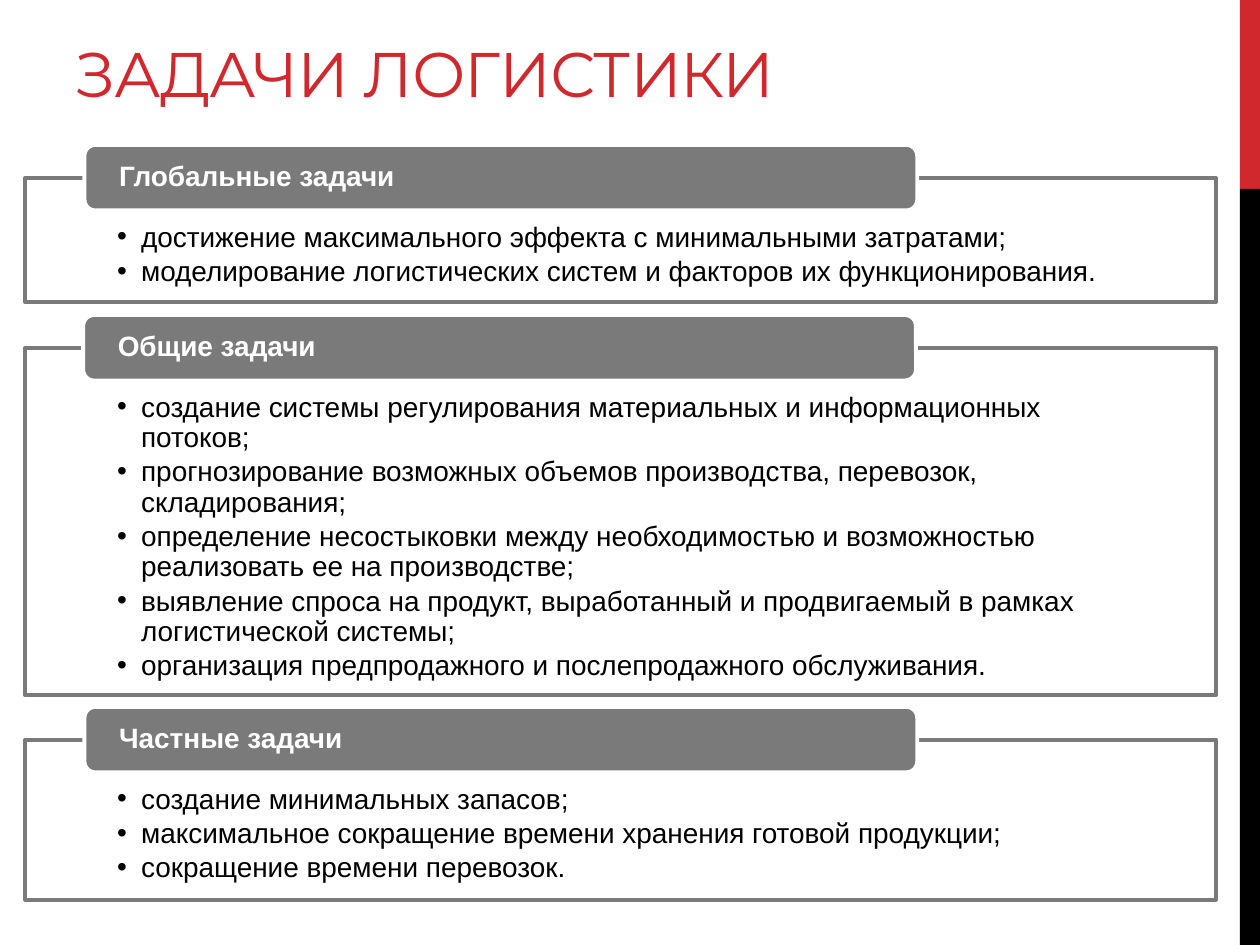
from dataclasses import dataclass

from lxml.etree import SubElement
from pptx import Presentation
from pptx.dml.color import RGBColor
from pptx.enum.shapes import MSO_SHAPE as Shape
from pptx.enum.text import MSO_ANCHOR as Anchor, PP_ALIGN as Align
from pptx.oxml.ns import qn
from pptx.util import Inches, Pt


@dataclass(frozen=True)
class Theme:
    red: str = "D1282E"
    black: str = "000000"
    white: str = "FFFFFF"
    gray: str = "7A7A7A"
    title_font: str = "Montserrat"
    body_font: str = "Arial"
    title_size: float = 36
    body_size: float = 16
    line_width: float = 2.25


@dataclass(frozen=True)
class TaskGroup:
    heading: str
    tasks: tuple[str, ...]
    top: float
    height: float
    tab_left: float = 0.67


THEME = Theme()
TAB_RISE = 0.26
GROUPS = (
    TaskGroup("Глобальные задачи", (
        "достижение максимального эффекта с минимальными затратами;",
        "моделирование логистических систем и факторов их функционирования.",
    ), 1.41, 0.99),
    TaskGroup("Общие задачи", (
        "создание системы регулирования материальных и информационных потоков;",
        "прогнозирование возможных объемов производства, перевозок, складирования;",
        "определение несостыковки между необходимостью и возможностью "
        "реализовать ее на производстве;",
        "выявление спроса на продукт, выработанный и продвигаемый в рамках "
        "логистической системы;",
        "организация предпродажного и послепродажного обслуживания.",
    ), 2.76, 2.76, 0.66),
    TaskGroup("Частные задачи", (
        "создание минимальных запасов;",
        "максимальное сокращение времени хранения готовой продукции;",
        "сокращение времени перевозок.",
    ), 5.87, 1.27),
)


def add_box(s, kind, left: float, top: float, width: float, height: float,
            fill: str, line: str | None = None, alpha: int | None = None):
    sp = s.shapes.add_shape(kind, Inches(left), Inches(top), Inches(width), Inches(height))
    sp.shadow.inherit = False
    sp.fill.solid()
    sp.fill.fore_color.rgb = RGBColor.from_string(fill)
    if alpha is not None:
        color = sp.fill._xPr.find(qn("a:solidFill"))[0]
        SubElement(color, qn("a:alpha"), val=str(alpha * 1000))
    if line:
        sp.line.color.rgb = RGBColor.from_string(line)
        sp.line.width = Pt(THEME.line_width)
    else:
        sp.line.fill.background()
    return sp


def write(sp, *paragraphs: str, size: float = THEME.body_size, font: str = THEME.body_font,
          color: str = THEME.black, bold: bool = False, anchor=Anchor.TOP,
          insets: tuple[float, ...] = (0.1, 0.05, 0.1, 0.05), line_spacing: float = 0.9,
          space_after: float = 0, bullet: bool = False, tracking: float = 0) -> None:
    tf = sp.text_frame
    tf.word_wrap = True
    tf.vertical_anchor = anchor
    tf.margin_left, tf.margin_top, tf.margin_right, tf.margin_bottom = map(Inches, insets)
    for i, text in enumerate(paragraphs):
        p = tf.add_paragraph() if i else tf.paragraphs[0]
        p.alignment = Align.LEFT
        p.line_spacing = line_spacing
        p.space_after = Pt(space_after)
        if bullet:
            pPr = p._p.get_or_add_pPr()
            pPr.set("marL", str(Inches(0.19)))
            pPr.set("indent", str(-Inches(0.19)))
            SubElement(pPr, qn("a:buFont"), typeface=font)
            SubElement(pPr, qn("a:buChar"), char="•")
        r = p.add_run()
        r.text = text
        r.font.size = Pt(size)
        r.font.name = font
        r.font.bold = bold
        r.font.color.rgb = RGBColor.from_string(color)
        if tracking:
            r.font._element.set("spc", str(round(tracking * 100)))


def add_group(s, group: TaskGroup) -> None:
    frame = add_box(s, Shape.RECTANGLE, 0.2, group.top, 9.45, group.height,
                    THEME.white, THEME.gray, alpha=90)
    write(frame, *group.tasks, insets=(0.73, 0.36, 0.73, 0.12), space_after=2.4, bullet=True)
    tab = add_box(s, Shape.ROUNDED_RECTANGLE, group.tab_left, group.top - TAB_RISE, 6.61, 0.52,
                  THEME.gray, THEME.white)
    write(tab, group.heading, color=THEME.white, bold=True, anchor=Anchor.MIDDLE,
          insets=(0.25, 0, 0.25, 0))


def main() -> None:
    prs = Presentation()
    prs.slide_width, prs.slide_height = Inches(10), Inches(7.5)
    s = prs.slides.add_slide(prs.slide_layouts[6])
    add_box(s, Shape.RECTANGLE, 9.84, 0, 0.16, 1.5, THEME.red)
    add_box(s, Shape.RECTANGLE, 9.84, 1.5, 0.16, 6, THEME.black)
    title = s.shapes.add_textbox(Inches(0.5), Inches(0.17), Inches(6.33), Inches(0.75))
    write(title, "ЗАДАЧИ ЛОГИСТИКИ", size=THEME.title_size, font=THEME.title_font,
          color=THEME.red, anchor=Anchor.BOTTOM, line_spacing=1, tracking=-0.6)
    for group in GROUPS:
        add_group(s, group)
    prs.save("out.pptx")


if __name__ == "__main__":
    main()
